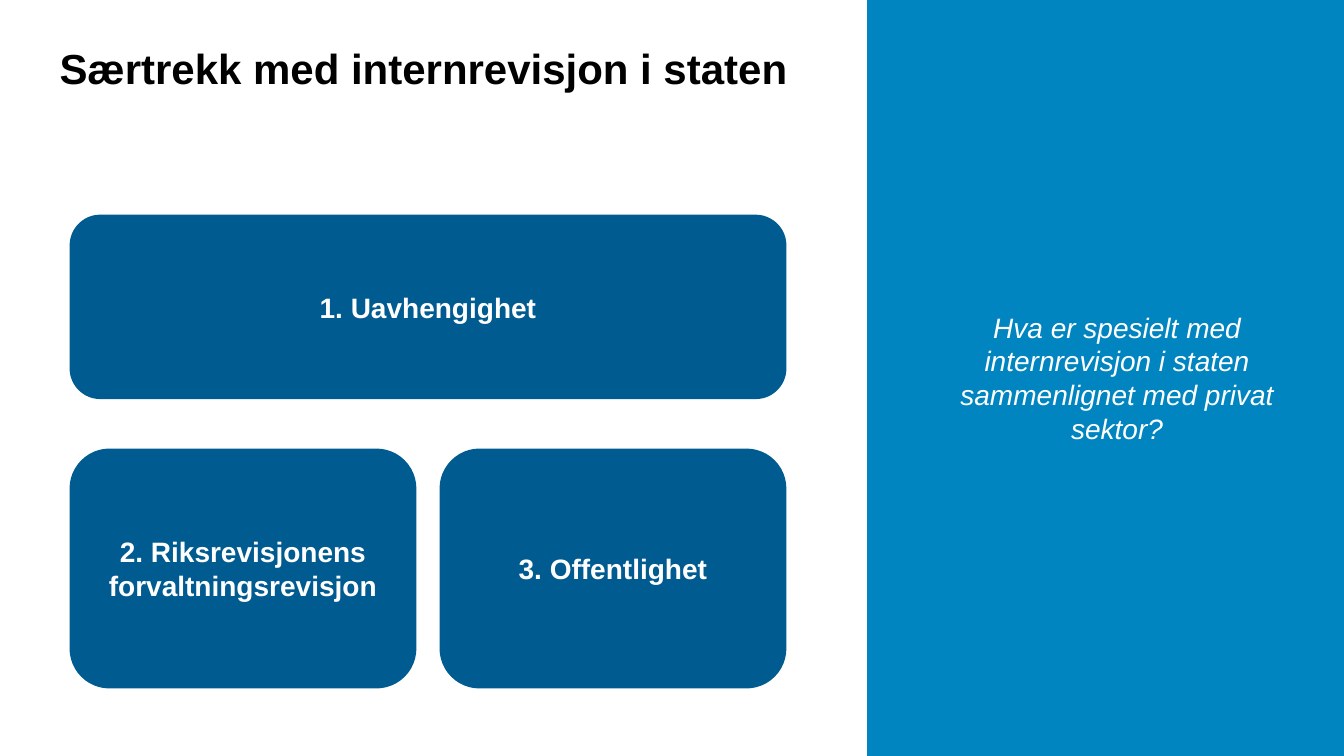
from pptx import Presentation
from pptx.dml.color import RGBColor
from pptx.enum.shapes import MSO_SHAPE
from pptx.enum.text import MSO_ANCHOR, MSO_AUTO_SIZE, PP_ALIGN
from pptx.util import Inches, Pt

RECTANGLE = MSO_SHAPE.RECTANGLE
ROUNDED = MSO_SHAPE.ROUNDED_RECTANGLE
TOP, MIDDLE = MSO_ANCHOR.TOP, MSO_ANCHOR.MIDDLE
LEFT, CENTER = PP_ALIGN.LEFT, PP_ALIGN.CENTER
NO_AUTOFIT = MSO_AUTO_SIZE.NONE

SLIDE_WIDTH, SLIDE_HEIGHT = 13.33, 7.5
PANEL_LEFT = 8.6
GRID_LEFT, GRID_WIDTH, GUTTER = 0.69, 7.11, 0.23
COLUMN_WIDTH = (GRID_WIDTH - GUTTER) / 2
ROWS = [(2.13, 1.83), (4.45, 2.38)]
CARDS = [
    ("1. Uavhengighet", 0, 0, 2),
    ("2. Riksrevisjonens forvaltningsrevisjon", 1, 0, 1),
    ("3. Offentlighet", 1, 1, 1),
]


def color(value):
    return RGBColor.from_string(value)


def inches(*lengths):
    return [Inches(length) for length in lengths]


def write(box, text, size, hue, align=CENTER, anchor=MIDDLE, bold=False, italic=False):
    frame = box.text_frame
    frame.text = text
    frame.word_wrap = True
    frame.auto_size = NO_AUTOFIT
    frame.vertical_anchor = anchor
    frame.margin_left = frame.margin_right = 0
    frame.margin_top = frame.margin_bottom = 0
    para = frame.paragraphs[0]
    para.alignment = align
    font = para.runs[0].font
    font.name, font.size = "Arial", Pt(size)
    font.bold, font.italic = bold, italic
    font.color.rgb = color(hue)
    return para


def add_block(page, kind, area, fill):
    block = page.shapes.add_shape(kind, *inches(*area))
    block.shadow.inherit = False
    block.fill.solid()
    block.fill.fore_color.rgb = color(fill)
    block.line.fill.background()
    return block


def add_title(page, text):
    title = page.shapes.title
    title.left, title.top, title.width, title.height = inches(0.59, 0.48, 7.62, 0.77)
    para = write(title, text, 30, "000000", LEFT, TOP, bold=True)
    para.line_spacing = 0.9


def add_card(page, text, row, column, span):
    top, height = ROWS[row]
    left = GRID_LEFT + column * (COLUMN_WIDTH + GUTTER)
    width = span * COLUMN_WIDTH + (span - 1) * GUTTER
    card = add_block(page, ROUNDED, (left, top, width, height), "005B91")
    write(card, text, 20, "FFFFFF", bold=True)


def add_question(page, text):
    question = page.shapes.add_textbox(*inches(9.26, 2.05, 3.64, 3.39))
    write(question, text, 20, "FFFFFF", italic=True)


def main():
    deck = Presentation()
    deck.slide_width, deck.slide_height = inches(SLIDE_WIDTH, SLIDE_HEIGHT)
    page = deck.slides.add_slide(deck.slide_layouts[5])
    panel = (PANEL_LEFT, 0, SLIDE_WIDTH - PANEL_LEFT, SLIDE_HEIGHT)
    add_block(page, RECTANGLE, panel, "0085C0")
    add_title(page, "Særtrekk med internrevisjon i staten")
    for card in CARDS:
        add_card(page, *card)
    add_question(
        page,
        "Hva er spesielt med internrevisjon i staten sammenlignet med privat sektor?",
    )
    deck.save("out.pptx")


if __name__ == "__main__":
    main()
